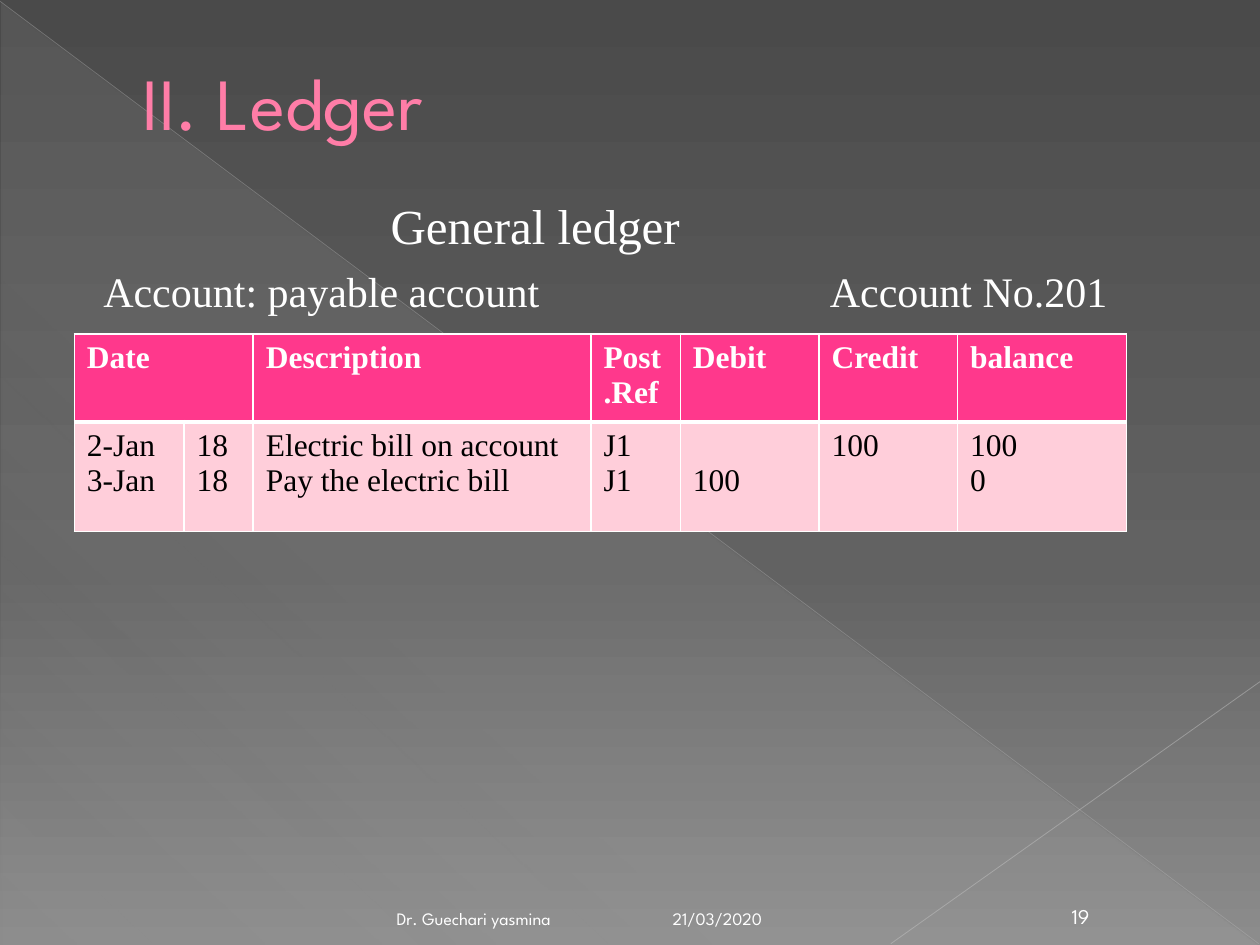
from lxml import etree
from pptx import Presentation
from pptx.dml.color import RGBColor
from pptx.enum.shapes import MSO_CONNECTOR, MSO_SHAPE
from pptx.enum.text import MSO_ANCHOR, PP_ALIGN
from pptx.oxml.ns import qn
from pptx.util import Inches, Pt

STRAIGHT, TRIANGLE = MSO_CONNECTOR.STRAIGHT, MSO_SHAPE.RIGHT_TRIANGLE
TOP, MIDDLE, BOTTOM = MSO_ANCHOR.TOP, MSO_ANCHOR.MIDDLE, MSO_ANCHOR.BOTTOM
LEFT, CENTER, RIGHT = PP_ALIGN.LEFT, PP_ALIGN.CENTER, PP_ALIGN.RIGHT

WHITE = RGBColor(0xFF, 0xFF, 0xFF)
BLACK = RGBColor(0, 0, 0)
TITLE_PINK = RGBColor(0xFF, 0x7D, 0xA7)
TITLE_EDGE = RGBColor(0xB1, 0x27, 0x61)
HEADER_PINK = RGBColor(0xFF, 0x38, 0x8C)
ROW_PINK = RGBColor(0xFF, 0xCE, 0xDA)
DARK_GREY = RGBColor(0x4A, 0x4A, 0x4A)
MID_GREY = RGBColor(0x62, 0x62, 0x62)
LIGHT_GREY = RGBColor(0x8C, 0x8C, 0x8C)
VEIL = RGBColor(0xD2, 0xD2, 0xD2)
LONG_LINE = RGBColor(0xBF, 0xBF, 0xBF)
SHORT_LINE = RGBColor(0xC6, 0xC6, 0xC6)

SANS, SERIF = "League Spartan", "Times New Roman"
WIDTH, HEIGHT = 10, 7.5
FOOTER_TOP, FOOTER_H = 7.09, 0.33
LINE_18 = 0.28  # height of one 18 pt table line

COL_WIDTHS = [0.87, 0.55, 2.68, 0.71, 1.1, 1.1, 1.34]
ROW_HEIGHTS = [0.63, 0.87]
HEADERS = ["Date", "", "Description", "Post .Ref", "Debit", "Credit", "balance"]
ENTRIES = ["2-Jan\n3-Jan", "18\n18",
           "Electric bill on account\nPay the electric bill",
           "J1\nJ1", "100", "100", "100\n0"]
DEBIT = HEADERS.index("Debit")


def add_color(parent, color, alpha=100):
    clr = etree.SubElement(parent, qn("a:srgbClr"), val=str(color))
    if alpha < 100:
        etree.SubElement(clr, qn("a:alpha"), val=str(alpha * 1000))
    return clr


def add_ln(parent, tag, color, width):
    ln = etree.Element(qn(tag), w=str(Pt(width)))
    add_color(etree.SubElement(ln, qn("a:solidFill")), color)
    parent.insert(len(parent) if tag != "a:ln" else 0, ln)


def set_gradient(fill, element, stops, angle):
    """Fill with (position, color, alpha) stops; the angle runs clockwise."""
    fill.gradient()
    grad = element.find(".//" + qn("a:gradFill"))
    stop_list = grad.find(qn("a:gsLst"))
    for old in list(stop_list):
        stop_list.remove(old)
    for pos, color, alpha in stops:
        gs = etree.SubElement(stop_list, qn("a:gs"), pos=str(pos * 1000))
        add_color(gs, color, alpha)
    grad.find(qn("a:lin")).set("ang", str(angle * 60000))


def add_line(slide, start, end, color, width, alpha):
    line = slide.shapes.add_connector(
        STRAIGHT, *(Inches(v) for v in (*start, *end)))
    line.line.color.rgb = color
    line.line.width = Pt(width)
    clr = line.line._ln.find(".//" + qn("a:srgbClr"))
    etree.SubElement(clr, qn("a:alpha"), val=str(alpha * 1000))
    etree.SubElement(line._element.spPr, qn("a:effectLst"))


def format_text(tf, font, size, color, bold=False, align=LEFT):
    for p in tf.paragraphs:
        p.alignment = align
        for r in p.runs:
            r.font.name, r.font.size, r.font.bold = font, Pt(size), bold
            r.font.color.rgb = color


def add_text(slide, box, text, font, size, color=WHITE, align=LEFT,
             anchor=BOTTOM, left=0.1, right=0.1):
    sp = slide.shapes.add_textbox(*(Inches(v) for v in box))
    tf = sp.text_frame
    tf.word_wrap = True
    tf.vertical_anchor = anchor
    tf.margin_left, tf.margin_right = Inches(left), Inches(right)
    tf.text = text
    format_text(tf, font, size, color, align=align)
    return tf


def add_background(slide):
    bg = slide.background.fill
    set_gradient(bg, slide._element, [(0, DARK_GREY, 100), (60, MID_GREY, 100),
                                      (100, LIGHT_GREY, 100)], 90)
    sp = slide.shapes.add_shape(TRIANGLE, Inches(0.01), Inches(0.02),
                                Inches(WIDTH - 0.02), Inches(HEIGHT - 0.02))
    sp.shadow.inherit = False
    sp.line.fill.background()
    set_gradient(sp.fill, sp._element,
                 [(0, VEIL, 10), (70, VEIL, 8), (100, VEIL, 1)], 133)
    add_line(slide, (0, 0.01), (9.99, 7.49), LONG_LINE, 0.39, 35)
    add_line(slide, (WIDTH, 5.41), (7.07, 7.49), SHORT_LINE, 0.47, 45)


def add_headings(slide):
    tf = add_text(slide, (0.5, 0.29, 9, 1.02), "II. Ledger", SANS, 42,
                  TITLE_PINK, anchor=MIDDLE, left=0.63)
    add_ln(tf.paragraphs[0].runs[0].font._element, "a:ln", TITLE_EDGE, 0.5)

    tf = add_text(slide, (0.5, 1.5, 9, 1.1),
                  "General ledger\nAccount: payable account\tAccount No.201",
                  SERIF, 24, anchor=TOP, left=0.32)
    heading, account = tf.paragraphs
    heading.runs[0].font.size = Pt(28)
    heading._p.get_or_add_pPr().set("marL", str(Inches(2.28)))
    account.space_before = Pt(6.5)
    tabs = etree.SubElement(account._p.get_or_add_pPr(), qn("a:tabLst"))
    etree.SubElement(tabs, qn("a:tab"), pos=str(Inches(7.97)), algn="r")


def style_cell(cell, fill, color, bold, top, bottom):
    format_text(cell.text_frame, SERIF, 18, color, bold)
    tcPr = cell._tc.get_or_add_tcPr()
    for side, width in zip("LRTB", (1, 1, top, bottom)):
        add_ln(tcPr, "a:ln" + side, WHITE, width)
    cell.fill.solid()
    cell.fill.fore_color.rgb = fill


def add_ledger(slide):
    table = slide.shapes.add_table(
        len(ROW_HEIGHTS), len(COL_WIDTHS), Inches(0.59), Inches(2.65),
        Inches(sum(COL_WIDTHS)), Inches(sum(ROW_HEIGHTS))).table
    for col, width in zip(table.columns, COL_WIDTHS):
        col.width = Inches(width)
    for row, height in zip(table.rows, ROW_HEIGHTS):
        row.height = Inches(height)
    looks = [(HEADER_PINK, WHITE, True, 1, 3), (ROW_PINK, BLACK, False, 3, 1)]
    for i, (texts, look) in enumerate(zip((HEADERS, ENTRIES), looks)):
        for j, text in enumerate(texts):
            cell = table.cell(i, j)
            cell.text = text
            style_cell(cell, *look)
    table.cell(0, 0).merge(table.cell(0, 1))
    # The debit belongs to the second entry, one line down.
    table.cell(1, DEBIT).margin_top = Inches(0.05 + LINE_18)


def add_footer(slide):
    add_text(slide, (5.24, FOOTER_TOP, 2.33, FOOTER_H), "21/03/2020", SANS, 10)
    add_text(slide, (8.3, FOOTER_TOP, 0.55, FOOTER_H), "19", SANS, 12,
             align=CENTER)
    add_text(slide, (0.5, FOOTER_TOP, 4.66, FOOTER_H), "Dr. Guechari yasmina",
             SANS, 10, align=RIGHT, right=0.79)


def main():
    prs = Presentation()
    prs.slide_width, prs.slide_height = Inches(WIDTH), Inches(HEIGHT)
    slide = prs.slides.add_slide(prs.slide_layouts[6])
    add_background(slide)
    add_headings(slide)
    add_ledger(slide)
    add_footer(slide)
    prs.save("out.pptx")


if __name__ == "__main__":
    main()
